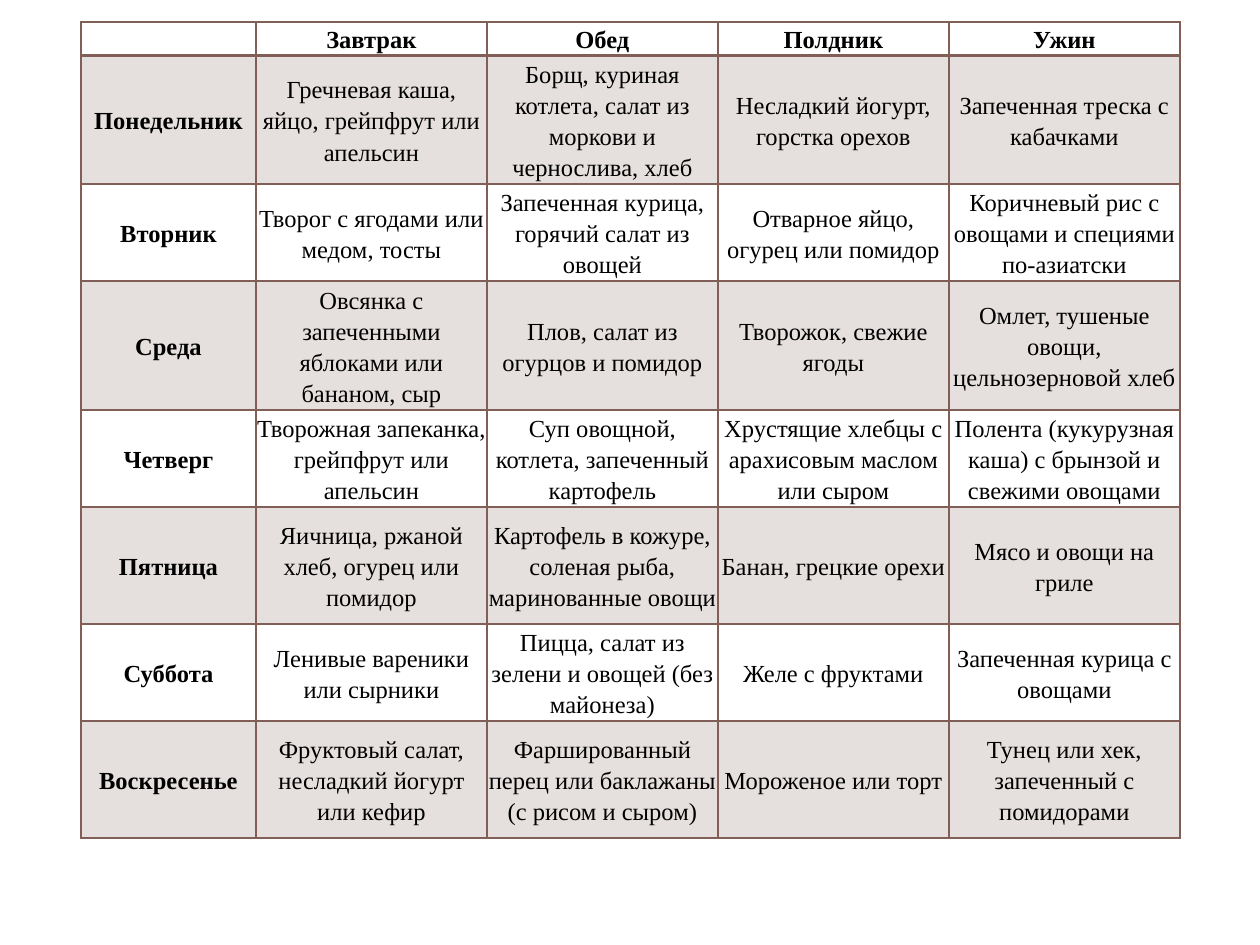
from lxml import etree
from pptx import Presentation
from pptx.dml.color import RGBColor
from pptx.enum.text import MSO_ANCHOR, PP_ALIGN
from pptx.oxml.ns import qn
from pptx.util import Emu, Pt

PX = 914400 // 126
CENTER = PP_ALIGN.CENTER
MIDDLE = MSO_ANCHOR.MIDDLE

THEME = {
    "font": "Times New Roman",
    "size": Pt(14),
    "text": RGBColor(0x00, 0x00, 0x00),
    "accent": RGBColor(0x81, 0x5F, 0x56),
    "band_opacity": 20,
    "line": Pt(1),
    "header_line": Pt(2),
}

MENU = [
    ["", "Завтрак", "Обед", "Полдник", "Ужин"],
    ["Понедельник", "Гречневая каша, яйцо, грейпфрут или апельсин",
     "Борщ, куриная котлета, салат из моркови и чернослива, хлеб",
     "Несладкий йогурт, горстка орехов", "Запеченная треска с кабачками"],
    ["Вторник", "Творог с ягодами или медом, тосты",
     "Запеченная курица, горячий салат из овощей",
     "Отварное яйцо, огурец или помидор",
     "Коричневый рис с овощами и специями по-азиатски"],
    ["Среда", "Овсянка с запеченными яблоками или бананом, сыр",
     "Плов, салат из огурцов и помидор", "Творожок, свежие ягоды",
     "Омлет, тушеные овощи, цельнозерновой хлеб"],
    ["Четверг", "Творожная запеканка, грейпфрут или апельсин",
     "Суп овощной, котлета, запеченный картофель",
     "Хрустящие хлебцы с арахисовым маслом или сыром",
     "Полента (кукурузная каша) с брынзой и свежими овощами"],
    ["Пятница", "Яичница, ржаной хлеб, огурец или помидор",
     "Картофель в кожуре, соленая рыба, маринованные овощи",
     "Банан, грецкие орехи", "Мясо и овощи на гриле"],
    ["Суббота", "Ленивые вареники или сырники",
     "Пицца, салат из зелени и овощей (без майонеза)",
     "Желе с фруктами", "Запеченная курица с овощами"],
    ["Воскресенье", "Фруктовый салат, несладкий йогурт или кефир",
     "Фаршированный перец или баклажаны (с рисом и сыром)",
     "Мороженое или торт", "Тунец или хек, запеченный с помидорами"],
]
COLUMN_WIDTHS = [175] + [231] * 4
ROW_HEIGHTS = [33, 129, 97, 129, 97, 117, 97, 117]


def set_borders(cell, bottom_width):
    """Line all four sides; the lines must precede the fill in the cell XML."""
    properties = cell._tc.get_or_add_tcPr()
    for index, side in enumerate(("lnL", "lnR", "lnT", "lnB")):
        width = bottom_width if side == "lnB" else THEME["line"]
        line = etree.Element(qn(f"a:{side}"), w=str(int(width)))
        fill = etree.SubElement(line, qn("a:solidFill"))
        etree.SubElement(fill, qn("a:srgbClr"), val=str(THEME["accent"]))
        properties.insert(index, line)


def fill_band(cell):
    cell.fill.solid()
    cell.fill.fore_color.rgb = THEME["accent"]
    color = cell._tc.tcPr.find(f"{qn('a:solidFill')}/{qn('a:srgbClr')}")
    etree.SubElement(color, qn("a:alpha"), val=str(THEME["band_opacity"] * 1000))


presentation = Presentation()
presentation.slide_width = Emu(1260 * PX)
presentation.slide_height = Emu(945 * PX)
slide = presentation.slides.add_slide(presentation.slide_layouts[6])

table = slide.shapes.add_table(
    len(ROW_HEIGHTS), len(COLUMN_WIDTHS), Emu(81 * PX), Emu(22 * PX),
    Emu(sum(COLUMN_WIDTHS) * PX), Emu(sum(ROW_HEIGHTS) * PX)).table
table.first_row = False
table.horz_banding = False
for column, width in zip(table.columns, COLUMN_WIDTHS):
    column.width = Emu(width * PX)
for row, height in zip(table.rows, ROW_HEIGHTS):
    row.height = Emu(height * PX)

for row_index, meals in enumerate(MENU):
    for column_index, text in enumerate(meals):
        cell = table.cell(row_index, column_index)
        cell.margin_left = cell.margin_right = Emu(PX)
        cell.margin_top = cell.margin_bottom = Emu(PX)
        cell.vertical_anchor = MIDDLE
        cell.text = text
        paragraph = cell.text_frame.paragraphs[0]
        paragraph.alignment = CENTER
        paragraph.line_spacing = 1.15
        paragraph.font.name = THEME["font"]
        paragraph.font.size = THEME["size"]
        paragraph.font.color.rgb = THEME["text"]
        paragraph.font.bold = row_index == 0 or column_index == 0
        if row_index % 2:
            fill_band(cell)
        else:
            cell.fill.background()
        set_borders(cell, THEME["line"] if row_index else THEME["header_line"])

presentation.save("out.pptx")
